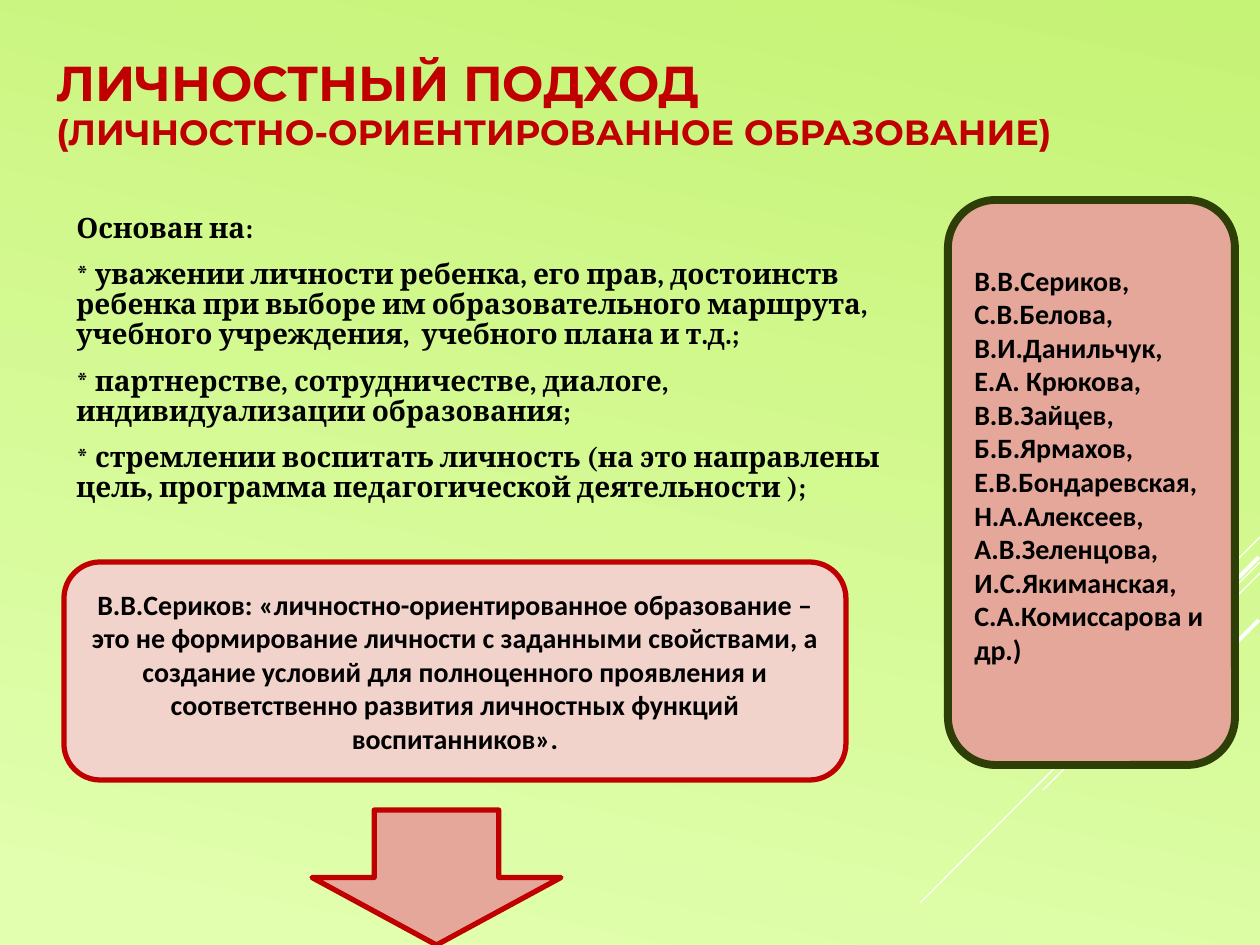
from pptx import Presentation
from pptx.dml.color import RGBColor
from pptx.enum.shapes import MSO_CONNECTOR, MSO_SHAPE
from pptx.enum.text import MSO_ANCHOR, PP_ALIGN
from pptx.util import Emu, Pt
from lxml import etree

ROUND, ARROW = MSO_SHAPE.ROUNDED_RECTANGLE, MSO_SHAPE.DOWN_ARROW
STRAIGHT = MSO_CONNECTOR.STRAIGHT
MIDDLE = MSO_ANCHOR.MIDDLE
LEFT, CENTER = PP_ALIGN.LEFT, PP_ALIGN.CENTER
PX_PER_INCH = 126
A = "http://schemas.openxmlformats.org/drawingml/2006/main"

COLORS = {
    "bg_top": "C5F375", "bg_bottom": "E2FFB0", "white": "FFFFFF",
    "red": "C00000", "black": "000000", "rose": "E5A799",
    "pale_rose": "F2D3CC", "dark_green": "2E3E07",
}


def px(n):
    return Emu(round(n * 914400 / PX_PER_INCH))


def rgb(name):
    return RGBColor.from_string(COLORS[name])


class SlideBuilder:
    def __init__(self, slide):
        self.s = slide

    def background(self, top, bottom, angle):
        fill = self.s.background.fill
        fill.gradient()
        fill.gradient_angle = 360 - angle
        for stop, color, pos in zip(fill.gradient_stops, (top, bottom), (0, 0.98)):
            stop.color.rgb = rgb(color)
            stop.position = pos

    def line(self, x1, y1, x2, y2, width):
        c = self.s.shapes.add_connector(STRAIGHT, px(x1), px(y1), px(x2), px(y2))
        c.line.color.rgb = rgb("white")
        c.line.width = Pt(width)
        etree.SubElement(c._element.spPr, f"{{{A}}}effectLst")

    def style(self, p, font, size, color, align=LEFT):
        p.alignment = align
        p.font.name, p.font.size, p.font.bold = font, Pt(size), True
        p.font.color.rgb = rgb(color)

    def text_box(self, x, y, w, h):
        tf = self.s.shapes.add_textbox(px(x), px(y), px(w), px(h)).text_frame
        tf.word_wrap = True
        tf.vertical_anchor = MIDDLE
        return tf

    def title(self, box, lines):
        p = self.text_box(*box).paragraphs[0]
        self.style(p, "Montserrat", lines[0][1], "red")
        for i, (text, size) in enumerate(lines):
            if i:
                p.add_line_break()
            r = p.add_run()
            r.text = text
            r.font.size = Pt(size)

    def paragraphs(self, tf, texts, font, align=LEFT):
        for i, text in enumerate(texts):
            p = tf.paragraphs[0] if i == 0 else tf.add_paragraph()
            p.text = text
            self.style(p, font, 16, "black", align)

    def body(self, box, texts):
        tf = self.text_box(*box)
        self.paragraphs(tf, texts, "Cambria")
        for p in tf.paragraphs:
            p.line_spacing = 0.9
            p.space_before, p.space_after = Pt(3.2), Pt(6)

    def shape(self, kind, box, fill, line, width, texts=(), align=LEFT, bottom=6):
        sp = self.s.shapes.add_shape(kind, *map(px, box))
        sp.shadow.inherit = False
        sp.fill.solid()
        sp.fill.fore_color.rgb = rgb(fill)
        sp.line.color.rgb = rgb(line)
        sp.line.width = Pt(width)
        tf = sp.text_frame
        tf.word_wrap = True
        tf.vertical_anchor = MIDDLE
        tf.margin_bottom = px(bottom)
        self.paragraphs(tf, texts, "Calibri", align)


def main():
    prs = Presentation()
    prs.slide_width, prs.slide_height = px(1260), px(945)
    b = SlideBuilder(prs.slides.add_slide(prs.slide_layouts[6]))

    # Background with diagonal rays
    b.background("bg_top", "bg_bottom", 102)
    for x1, y1, x2, y2, width in (
        (1260, 537, 1155, 642, 0.75),
        (1260, 562, 920, 903, 0.75),
        (1260, 573, 1043, 790, 0.75),
        (1259, 557, 1061, 755, 2.25),
        (1259, 620, 1115, 764, 2.25),
    ):
        b.line(x1, y1, x2, y2, width)

    # Title and principles
    b.title((44, 50, 1191, 105), (
        ("ЛИЧНОСТНЫЙ ПОДХОД", 28),
        ("(ЛИЧНОСТНО-ОРИЕНТИРОВАННОЕ ОБРАЗОВАНИЕ)", 20),
    ))
    b.body((64, 185, 853, 348), (
        "Основан на:",
        "* уважении личности ребенка, его прав, достоинств ребенка при выборе им "
        "образовательного маршрута, учебного учреждения,  учебного плана и т.д.;",
        "* партнерстве, сотрудничестве, диалоге, индивидуализации образования;",
        "* стремлении воспитать личность (на это направлены цель, программа "
        "педагогической деятельности );",
    ))

    # Researchers
    b.shape(ROUND, (948, 200, 287, 565), "rose", "dark_green", 4.5, (
        "В.В.Сериков, С.В.Белова, В.И.Данильчук, Е.А. Крюкова, В.В.Зайцев, "
        "Б.Б.Ярмахов, Е.В.Бондаревская, Н.А.Алексеев, А.В.Зеленцова,",
        "И.С.Якиманская, С.А.Комиссарова и др.)",
    ), bottom=42)

    # Quotation and arrow
    b.shape(ROUND, (64, 562, 782, 218), "pale_rose", "red", 3, (
        "В.В.Сериков: «личностно-ориентированное образование – это не формирование "
        "личности с заданными свойствами, а создание условий для полноценного "
        "проявления и соответственно развития личностных функций воспитанников».",
    ), CENTER)
    b.shape(ARROW, (312, 810, 249, 135), "rose", "red", 3)

    prs.save("out.pptx")


if __name__ == "__main__":
    main()
